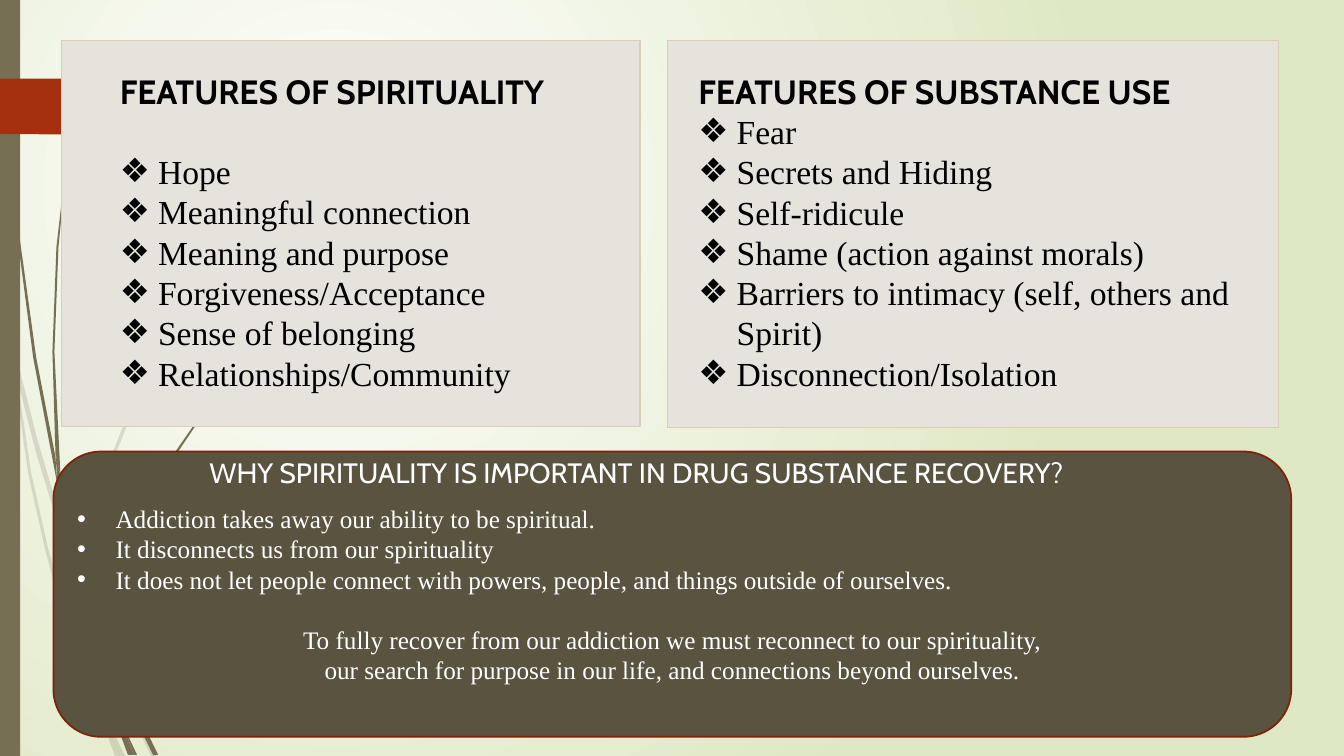
from pptx import Presentation
from pptx.dml.color import RGBColor
from pptx.enum.shapes import MSO_SHAPE
from pptx.enum.text import MSO_ANCHOR, PP_ALIGN
from pptx.oxml import parse_xml
from pptx.oxml.ns import nsdecls, qn
from pptx.util import Inches, Pt
from dataclasses import dataclass


@dataclass
class Theme:
    light: str = "FFFFFF"
    dark: str = "000000"
    green: str = "DFE8C4"
    olive: str = "766F54"
    rust: str = "A53010"
    card: str = "E5E3DB"
    edge: str = "DBCEB7"
    band: str = "59533F"
    rim: str = "7A240C"
    head: str = "Cabin"
    body: str = "Times New Roman"
    large: int = 24
    mid: int = 20
    small: int = 18


theme = Theme()

CARDS = [
    {"box": (6.62, 0.4, 6.06, 3.84), "text": (6.83, 0.65, 5.5, 3.33), "gap": 0,
     "head": "FEATURES OF SUBSTANCE USE",
     "items": ["Fear", "Secrets and Hiding", "Self-ridicule", "Shame (action against morals)",
               "Barriers to intimacy (self, others and Spirit)", "Disconnection/Isolation"]},
    {"box": (0.61, 0.4, 5.74, 3.83), "text": (1.09, 0.65, 4.77, 3.33), "gap": 28.6,
     "head": "FEATURES OF SPIRITUALITY",
     "items": ["Hope", "Meaningful connection", "Meaning and purpose",
               "Forgiveness/Acceptance", "Sense of belonging", "Relationships/Community"]},
]
WHY = "WHY SPIRITUALITY IS IMPORTANT IN DRUG SUBSTANCE RECOVERY?"
POINTS = ["Addiction takes away our ability to be spiritual.",
          "It disconnects us from our spirituality",
          "It does not let people connect with powers, people, and things outside of ourselves."]
CLOSE = ["To fully recover from our addiction we must reconnect to our spirituality,",
         "our search for purpose in our life, and connections beyond ourselves."]

PALE = [
    [(0.58, 5.22), (0.84, 5.99), (0.85, 5.86), (0.62, 5.2), (0.37, 4.36), (0.14, 3.45),
     (0.17, 3.76), (0.36, 4.5)],
    [(0.92, 6.07), (0.88, 5.96), (0.88, 6.1), (1.23, 6.94), (1.5, 7.5), (1.55, 7.5), (1.27, 6.92)],
    [(1.19, 7.5), (1.24, 7.5), (1.05, 7.11)],
    [(0.93, 6.83), (0.7, 6.19), (0.48, 5.45), (0.31, 4.69), (0.17, 3.76), (0.11, 3.5),
     (0.28, 4.7), (0.45, 5.46), (0.65, 6.21), (0.92, 6.93), (1.01, 7.14), (0.99, 7.07)],
    [(0.88, 5.84), (0.96, 5.22), (1.1, 4.62), (1.33, 4.05), (1.6, 3.49), (2.29, 2.45),
     (2.68, 1.98), (3.12, 1.54), (3.12, 1.53), (2.68, 1.97), (2.28, 2.44), (1.58, 3.48),
     (1.3, 4.03), (1.07, 4.61), (0.93, 5.22), (0.85, 5.84), (0.85, 5.86), (0.88, 5.96)],
    [(1.01, 7.14), (1.14, 7.5), (1.19, 7.5)],
    [(0.96, 6.92), (0.93, 6.83), (0.99, 7.07), (1.01, 7.14), (1.19, 7.5), (1.05, 7.11)],
]
DARK = [
    [(0.07, 1.1), (0.17, 2.33), (0.33, 3.55), (0.57, 4.81), (0.55, 4.53), (0.36, 3.55),
     (0.19, 2.32), (0.08, 1.09), (0.04, 0), (0.03, 0)],
    [(1.13, 6.49), (1.1, 6.41), (1.11, 6.56), (1.32, 7.08), (1.52, 7.49), (1.57, 7.49), (1.36, 7.06)],
    [(0.6, 4.72), (0.54, 3.49), (0.58, 2.45), (0.63, 1.93), (0.7, 1.41), (0.62, 1.93),
     (0.56, 2.45), (0.52, 3.49), (0.55, 4.49)],
    [(1.33, 7.49), (1.36, 7.49), (1.22, 7.19)],
    [(0.57, 4.77), (0.64, 5.05), (0.6, 4.72), (0.55, 4.49)],
    [(1.11, 6.33), (1.15, 5.92), (1.25, 5.52), (1.58, 4.76), (2.05, 4.06), (2.31, 3.74),
     (2.61, 3.44), (2.31, 3.73), (2.04, 4.05), (1.56, 4.74), (1.22, 5.51), (1.12, 5.91),
     (1.06, 6.31), (1.1, 6.41)],
    [(1.17, 7.22), (1.27, 7.49), (1.31, 7.49)],
    [(1.16, 7.06), (1.1, 6.91), (1.17, 7.22), (1.3, 7.49), (1.33, 7.49), (1.22, 7.19)],
]
FLAG = [(1.73, 1.08), (1.48, 1.33), (1.46, 1.34), (0, 1.33), (0, 0.78), (1.46, 0.78),
        (1.48, 0.79), (1.73, 1.04), (1.74, 1.06)]


def tint(color):
    return RGBColor.from_string(color)


def paint(shape, fill, edge=None, width=0):
    shape.shadow.inherit = False
    shape.fill.solid()
    shape.fill.fore_color.rgb = tint(fill)
    if edge:
        shape.line.color.rgb = tint(edge)
        shape.line.width = Pt(width)
    else:
        shape.line.fill.background()
    return shape


def block(kind, box, *style):
    return paint(slide.shapes.add_shape(kind, *map(Inches, box)), *style)


def outline(pts, color, alpha=100):
    first, *rest = [(Inches(x), Inches(y)) for x, y in pts]
    pen = slide.shapes.build_freeform(*first)
    pen.add_line_segments(rest)
    shape = paint(pen.convert_to_shape(), color)
    if alpha < 100:
        fill = shape.element.spPr.find(qn("a:solidFill"))
        fill[0].append(parse_xml(f'<a:alpha {nsdecls("a")} val="{alpha * 1000}"/>'))


def label(box):
    frame = slide.shapes.add_textbox(*map(Inches, box)).text_frame
    frame.word_wrap = True
    return frame


def write(frame, lines, font, size, color, bold=False, align=PP_ALIGN.LEFT, mark=None):
    paras = []
    for line in lines:
        para = frame.paragraphs[0] if not frame.text else frame.add_paragraph()
        para.text = line
        para.alignment = align
        face = para.runs[0].font
        face.name, face.size, face.bold = font, Pt(size), bold
        face.color.rgb = tint(color)
        if mark:
            props = para._p.get_or_add_pPr()
            props.set("marL", str(Inches(0.38)))
            props.set("indent", str(Inches(-0.38)))
            props.append(parse_xml(f'<a:buFont {nsdecls("a")} typeface="Arial"/>'))
            props.append(parse_xml(f'<a:buChar {nsdecls("a")} char="{mark}"/>'))
        paras.append(para)
    return paras


deck = Presentation()
deck.slide_width, deck.slide_height = Inches(40 / 3), Inches(7.5)
slide = deck.slides.add_slide(deck.slide_layouts[6])

back = slide.background.fill
back.gradient()
for stop, color in zip(back.gradient_stops, (theme.light, theme.green)):
    stop.color.rgb = tint(color)
grad = next(slide.element.iter(qn("a:gradFill")))
grad.replace(grad.find(qn("a:lin")), parse_xml(
    f'<a:path {nsdecls("a")} path="circle">'
    '<a:fillToRect l="50000" t="50000" r="100000" b="100000"/></a:path>'))

for pts in PALE:
    outline(pts, theme.olive, 20)
for pts in DARK:
    outline(pts, theme.olive)
block(MSO_SHAPE.RECTANGLE, (0, 0, 0.2, 7.5), theme.olive)
outline(FLAG, theme.rust)

for card in CARDS:
    block(MSO_SHAPE.RECTANGLE, card["box"], theme.card, theme.edge, 0.75)
for card in CARDS:
    frame = label(card["text"])
    head = write(frame, [card["head"]], theme.head, theme.large, theme.dark, bold=True)[0]
    head.space_after = Pt(card["gap"])
    write(frame, card["items"], theme.body, theme.large, theme.dark, mark="❖")

band = block(MSO_SHAPE.ROUNDED_RECTANGLE, (0.53, 4.48, 12.28, 2.83), theme.band, theme.rim, 1.25)
frame = band.text_frame
frame.word_wrap = True
frame.vertical_anchor = MSO_ANCHOR.MIDDLE
write(frame, POINTS, theme.body, theme.small, theme.light, mark="•")
close = write(frame, CLOSE, theme.body, theme.small, theme.light, align=PP_ALIGN.CENTER)
close[0].space_before = Pt(21.5)
write(label((0.53, 4.47, 11.57, 0.44)), [WHY], theme.head, theme.mid, theme.light,
      align=PP_ALIGN.CENTER)

deck.save("out.pptx")
